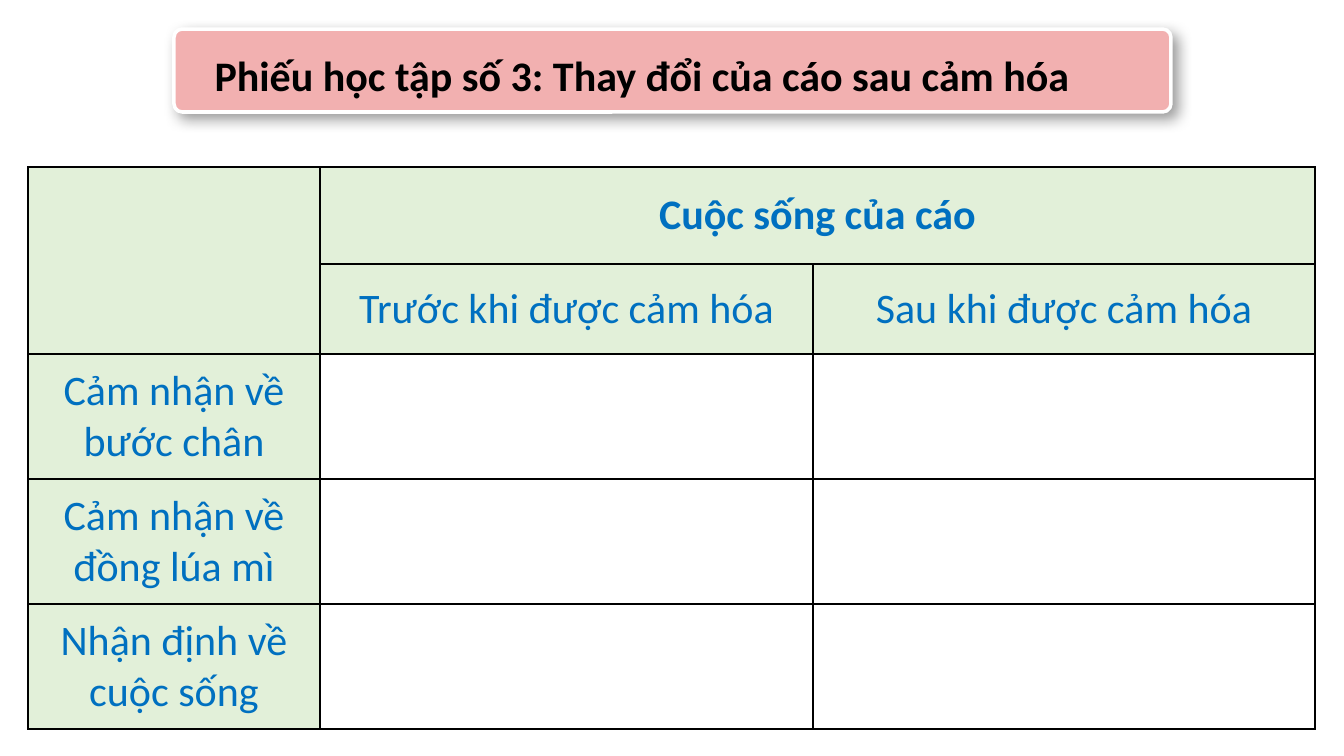
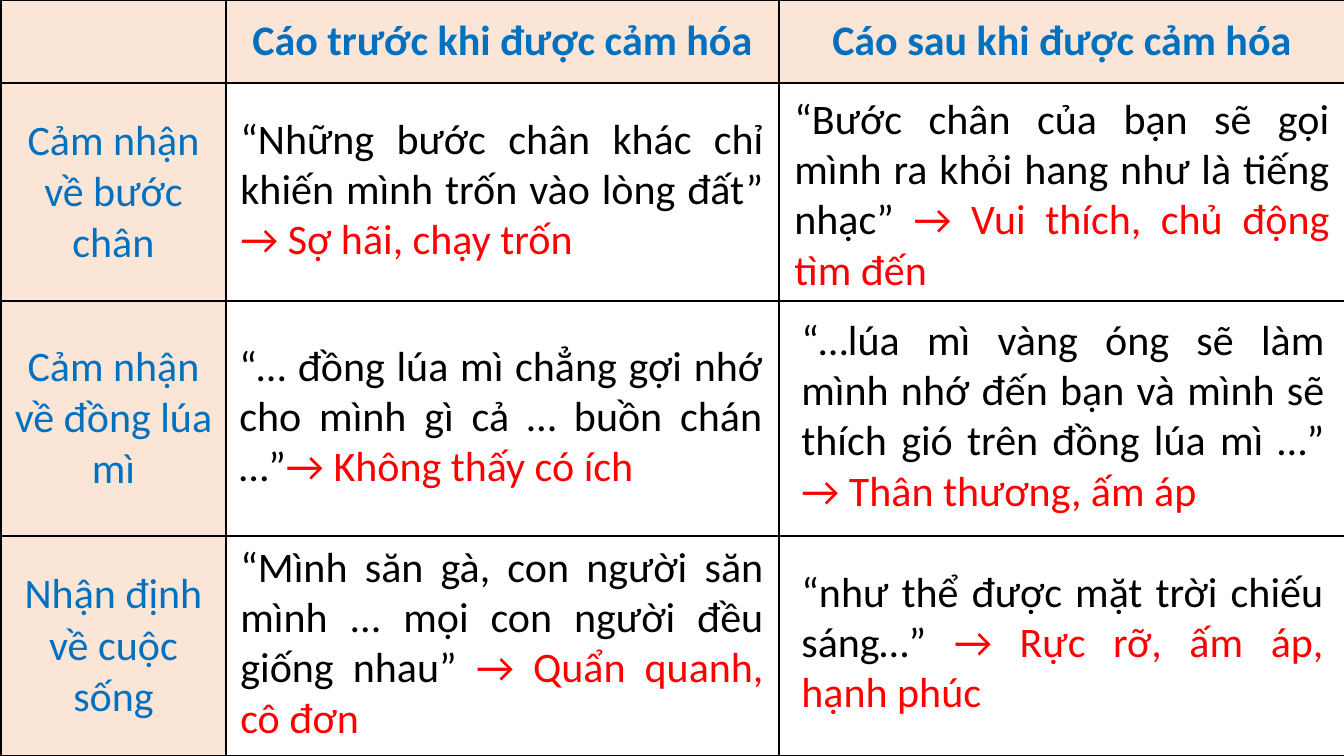
from lxml import etree
from pptx import Presentation, util as u
from pptx.dml.color import RGBColor
from pptx.enum import shapes, text
from pptx.oxml import parse_xml
from pptx.oxml.ns import nsdecls, qn

PX = 7257
FONT = "Calibri"
BLACK = RGBColor(0x00, 0x00, 0x00)
WHITE = RGBColor(0xFF, 0xFF, 0xFF)
BLUE = RGBColor(0x00, 0x70, 0xC0)
RED = RGBColor(0xFF, 0x00, 0x00)
PINK = RGBColor(0xF2, 0xB0, 0xB0)
GREEN = RGBColor(0xE2, 0xF0, 0xD9)
PEACH = RGBColor(0xFB, 0xE5, 0xD6)

ASPECTS = ["Cảm nhận về bước chân", "Cảm nhận về đồng lúa mì", "Nhận định về cuộc sống"]


def style_run(r, color, bold=False):
    r.font.name = FONT
    r.font.size = u.Pt(24)
    r.font.bold = bold
    r.font.color.rgb = color


def add_grid(s, left, top, widths, heights, labels, head_rows, head_fill):
    tbl = s.shapes.add_table(len(heights), len(widths), left * PX, top * PX,
                             sum(widths) * PX, sum(heights) * PX).table
    for col, w in zip(tbl.columns, widths):
        col.width = w * PX
    for row, h in zip(tbl.rows, heights):
        row.height = h * PX
    for i in range(len(heights)):
        for j in range(len(widths)):
            cell = tbl.cell(i, j)
            tcPr = cell._tc.get_or_add_tcPr()
            for side in ("lnL", "lnR", "lnT", "lnB"):
                tcPr.append(parse_xml(
                    f'<a:{side} {nsdecls("a")} w="12700"><a:solidFill>'
                    f'<a:srgbClr val="{BLACK}"/></a:solidFill></a:{side}>'))
            cell.fill.solid()
            cell.fill.fore_color.rgb = head_fill if i < head_rows or j == 0 else WHITE
            cell.vertical_anchor = text.MSO_ANCHOR.MIDDLE
            if (i, j) in labels:
                p = cell.text_frame.paragraphs[0]
                p.text = labels[i, j]
                p.alignment = text.PP_ALIGN.CENTER
                style_run(p.runs[0], BLUE, bold=i == 0)
    return tbl


prs = Presentation()
prs.slide_width = 1344 * PX
prs.slide_height = 756 * PX

s = prs.slides.add_slide(prs.slide_layouts[5])
sp = s.shapes.add_shape(shapes.MSO_SHAPE.ROUNDED_RECTANGLE, 174 * PX, 29 * PX, 997 * PX, 83 * PX)
sp.adjustments[0] = 0.1
sp.fill.solid()
sp.fill.fore_color.rgb = PINK
sp.line.color.rgb = WHITE
sp.line.width = u.Pt(2)
sp.shadow.inherit = False
sp._element.spPr.find(qn("a:effectLst")).append(parse_xml(
    f'<a:outerShdw {nsdecls("a")} blurRad="101600" dist="50800" dir="2700000" '
    f'algn="tl" rotWithShape="0"><a:srgbClr val="{BLACK}"><a:alpha val="40000"/>'
    '</a:srgbClr></a:outerShdw>'))

title = s.shapes.title
s.shapes._spTree.append(title._element)
title.left, title.top, title.width, title.height = 202 * PX, 43 * PX, 948 * PX, 63 * PX
tf = title.text_frame
tf.text = "Phiếu học tập số 3: Thay đổi của cáo sau cảm hóa"
tf.word_wrap = True
tf.auto_size = text.MSO_AUTO_SIZE.NONE
tf.vertical_anchor = text.MSO_ANCHOR.TOP
p = tf.paragraphs[0]
p.alignment = text.PP_ALIGN.JUSTIFY
style_run(p.runs[0], BLACK, bold=True)

labels = {(0, 1): "Cuộc sống của cáo",
          (1, 1): "Trước khi được cảm hóa",
          (1, 2): "Sau khi được cảm hóa"}
labels.update({(i, 0): aspect for i, aspect in enumerate(ASPECTS, 2)})
tbl = add_grid(s, 28, 167, [292, 493, 502], [97, 90, 125, 125, 125], labels, 2, GREEN)
tbl.cell(0, 0).merge(tbl.cell(1, 0))
tbl.cell(0, 1).merge(tbl.cell(0, 2))

s = prs.slides.add_slide(prs.slide_layouts[6])
labels = {(0, 1): "Cáo trước khi được cảm hóa", (0, 2): "Cáo sau khi được cảm hóa"}
labels.update({(i, 0): aspect for i, aspect in enumerate(ASPECTS, 1)})
add_grid(s, 1, 0, [225, 553, 566], [83, 218, 235, 220], labels, 1, PEACH)

quotes = [
    (228, 106, 548, 165, "“Những bước chân khác chỉ khiến mình trốn vào lòng đất” ",
     "→ Sợ hãi, chạy trốn"),
    (782, 86, 560, 217, "“Bước chân của bạn sẽ gọi mình ra khỏi hang như là tiếng nhạc” ",
     "→ Vui thích, chủ động tìm đến"),
    (227, 333, 548, 165, "“… đồng lúa mì chẳng gợi nhớ cho mình gì cả … buồn chán …”",
     "→ Không thấy có ích"),
    (789, 307, 548, 217, "“…lúa mì vàng óng sẽ làm mình nhớ đến bạn và mình sẽ thích gió trên đồng lúa mì …” ",
     "→ Thân thương, ấm áp"),
    (228, 534, 548, 217, "“Mình săn gà, con người săn mình ... mọi con người đều giống nhau” ",
     "→ Quẩn quanh, cô đơn"),
    (789, 559, 547, 165, "“như thể được mặt trời chiếu sáng…” ",
     "→ Rực rỡ, ấm áp, hạnh phúc"),
]
for left, top, width, height, quote, feeling in quotes:
    tf = s.shapes.add_textbox(left * PX, top * PX, width * PX, height * PX).text_frame
    tf.word_wrap = True
    tf.auto_size = text.MSO_AUTO_SIZE.SHAPE_TO_FIT_TEXT
    p = tf.paragraphs[0]
    p.alignment = text.PP_ALIGN.JUSTIFY
    for words, color in ((quote, BLACK), (feeling, RED)):
        r = p.add_run()
        r.text = words
        style_run(r, color)

prs.save("out.pptx")
